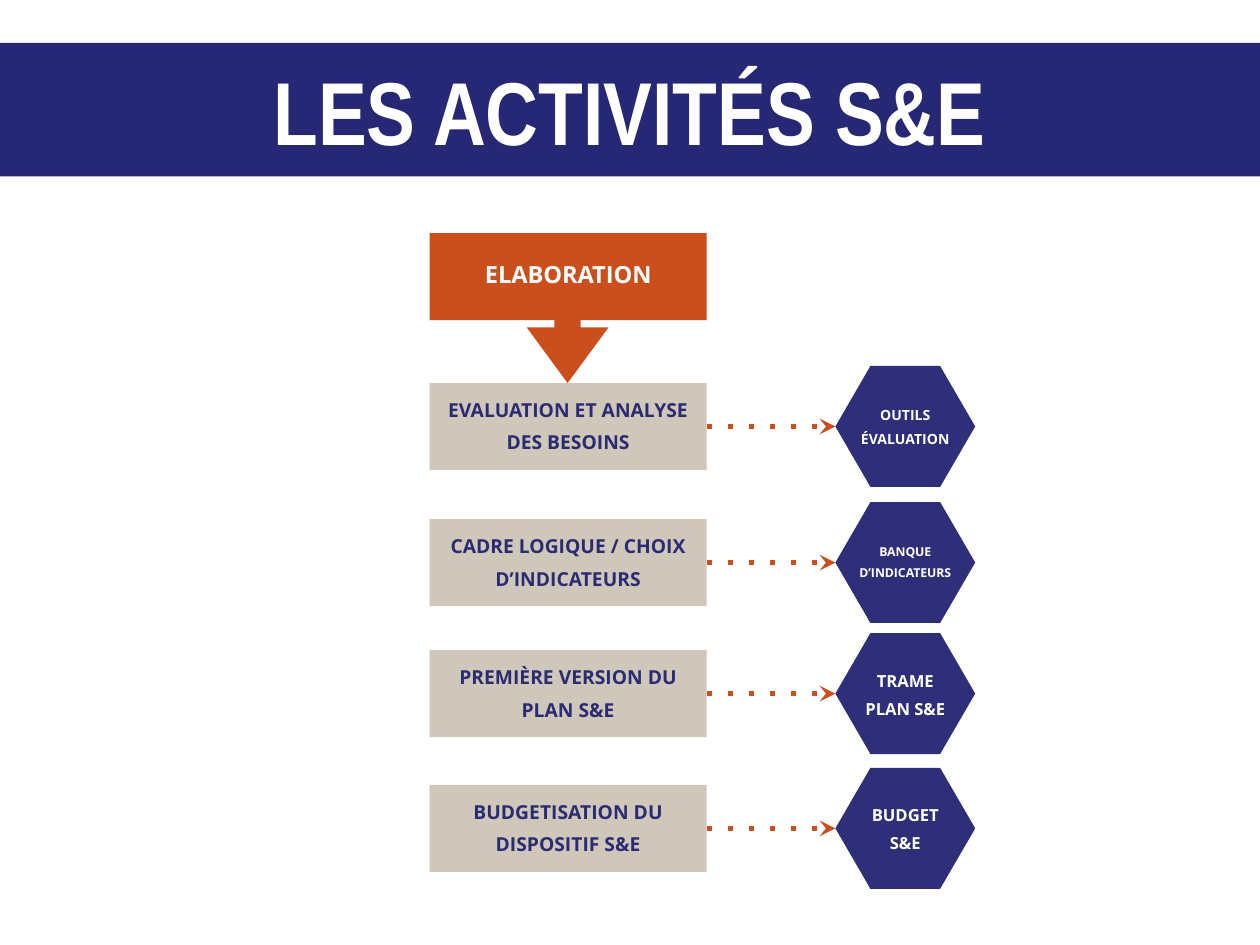
from lxml import etree
from pptx import Presentation
from pptx import util as u
from pptx.dml.color import RGBColor
from pptx.enum import shapes as kinds, text
from pptx.oxml.ns import qn

# Content: box top, box lines, tool text, tool text size
TITLE = "LES ACTIVITÉS S&E"
PHASE = "ELABORATION"
STEPS = [
    (3.04, ["EVALUATION ET ANALYSE", "DES BESOINS"], "OUTILS ÉVALUATION", 8),
    (4.12, ["CADRE LOGIQUE / CHOIX D’INDICATEURS"], "BANQUE D’INDICATEURS", 7),
    (5.16, ["PREMIÈRE VERSION DU", "PLAN S&E"], "TRAME PLAN S&E", 9.5),
    (6.23, ["BUDGETISATION DU", "DISPOSITIF S&E"], "BUDGET S&E", 9.5),
]
COLORS = {"band": "262775", "orange": "CA4F1C", "beige": "CFC7BA",
          "navy": "2B2B72", "hexagon": "2E2E79", "white": "FFFFFF"}

# Layout in inches
BOX_LEFT, BOX_WIDTH, BOX_HEIGHT = 3.41, 2.2, 0.69
HEX_LEFT, HEX_WIDTH, HEX_HEIGHT = 6.63, 1.11, 0.96
PHASE_TOP = 1.85


def color(name):
    return RGBColor.from_string(COLORS[name])


def write(shape, lines, size, font_color, insets, font="Open Sans", spacing=1.4):
    frame = shape.text_frame
    left, top, right, bottom = map(u.Inches, insets)
    settings = {"word_wrap": True, "auto_size": text.MSO_AUTO_SIZE.NONE,
                "vertical_anchor": text.MSO_ANCHOR.MIDDLE,
                "margin_left": left, "margin_top": top,
                "margin_right": right, "margin_bottom": bottom}
    for name, value in settings.items():
        setattr(frame, name, value)
    frame.text = "\n".join(lines)
    for paragraph in frame.paragraphs:
        paragraph.alignment = text.PP_ALIGN.CENTER
        paragraph.line_spacing = spacing
        run_font = paragraph.runs[0].font
        for name, value in {"name": font, "size": u.Pt(size), "bold": True}.items():
            setattr(run_font, name, value)
        run_font.color.rgb = color(font_color)


def add_filled(slide, kind, place, fill):
    shape = slide.shapes.add_shape(kind, *map(u.Inches, place))
    shape.shadow.inherit = False
    shape.fill.solid()
    shape.fill.fore_color.rgb = color(fill)
    shape.line.fill.background()
    return shape


def add_box(slide, top, fill, lines, size, font_color, bottom_inset):
    box = add_filled(slide, kinds.MSO_SHAPE.RECTANGLE,
                     (BOX_LEFT, top, BOX_WIDTH, BOX_HEIGHT), fill)
    write(box, lines, size, font_color, (0.03, 0.03, 0.03, bottom_inset))
    return box


def add_dotted_arrow(slide, box, middle):
    arrow = slide.shapes.add_connector(
        kinds.MSO_CONNECTOR.STRAIGHT, u.Inches(BOX_LEFT + BOX_WIDTH), u.Inches(middle),
        u.Inches(HEX_LEFT), u.Inches(middle))
    arrow.begin_connect(box, 3)
    arrow.end_y = arrow.begin_y
    arrow.line.color.rgb = color("orange")
    arrow.line.width = u.Pt(3)
    line = arrow.line._get_or_add_ln()
    etree.SubElement(line, qn("a:prstDash"), val="dot")
    etree.SubElement(line, qn("a:tailEnd"), type="stealth")
    etree.SubElement(arrow._element.spPr, qn("a:effectLst"))


def main():
    presentation = Presentation()
    presentation.slide_width, presentation.slide_height = u.Inches(10), u.Inches(7.5)
    slide = presentation.slides.add_slide(presentation.slide_layouts[5])

    # Title band
    title = slide.shapes.title
    place = {"left": 0, "top": 0.34, "width": 10, "height": 1.06}
    for name, value in place.items():
        setattr(title, name, u.Inches(value))
    title.fill.solid()
    title.fill.fore_color.rgb = color("band")
    write(title, [TITLE], 51, "white", (0.1,) * 4, "Arial Narrow", 1.0)

    # Phase box with its arrow down to the first step
    down = add_filled(slide, kinds.MSO_SHAPE.DOWN_ARROW, (4.18, 1.89, 0.65, 1.15), "orange")
    down.adjustments[0], down.adjustments[1] = 0.32, 0.68
    add_box(slide, PHASE_TOP, "orange", [PHASE], 13.5, "white", 0.16)

    # Steps, each leading to its tool
    for top, lines, tool, size in STEPS:
        middle = top + BOX_HEIGHT / 2
        box = add_box(slide, top, "beige", lines, 11, "navy", 0.11)
        hexagon = add_filled(slide, kinds.MSO_SHAPE.HEXAGON,
                             (HEX_LEFT, middle - HEX_HEIGHT / 2, HEX_WIDTH, HEX_HEIGHT),
                             "hexagon")
        hexagon.adjustments[0] = 0.29
        write(hexagon, [tool], size, "white", (0, 0, 0, 0.05))
        add_dotted_arrow(slide, box, middle)

    presentation.save("out.pptx")


if __name__ == "__main__":
    main()
